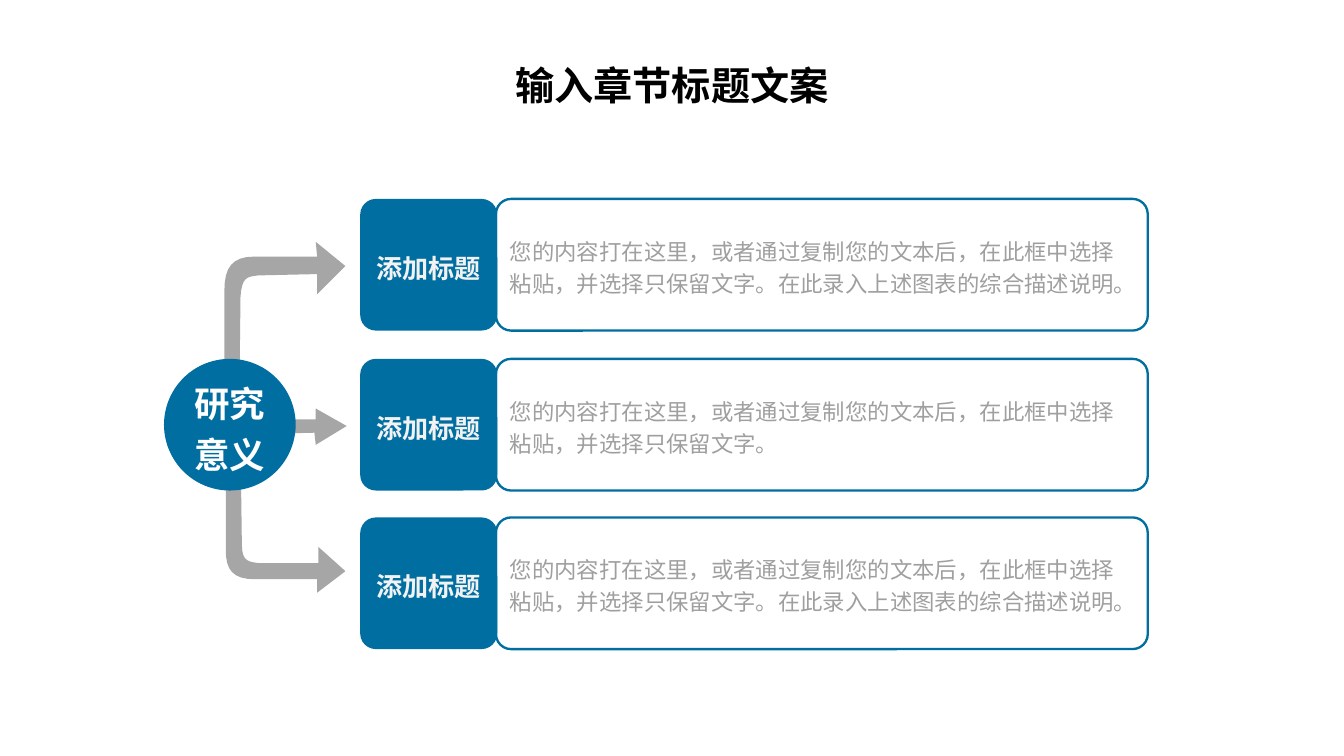
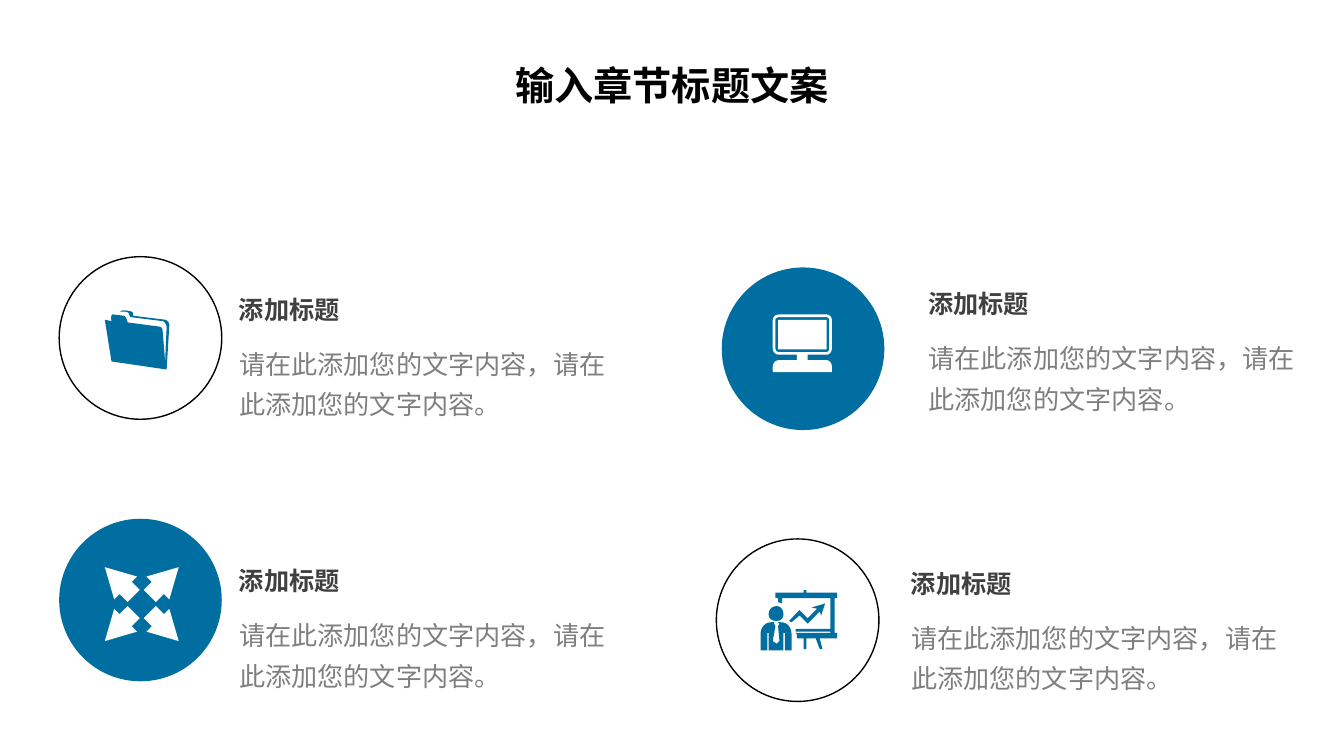
from lxml.etree import SubElement
from pptx import Presentation
from pptx.dml.color import RGBColor
from pptx.enum.shapes import MSO_SHAPE
from pptx.enum.text import MSO_ANCHOR, MSO_AUTO_SIZE, PP_ALIGN
from pptx.oxml.ns import qn
from pptx.util import Inches, Pt

BLUE = RGBColor(0x00, 0x6E, 0xA0)
WHITE = RGBColor(0xFF, 0xFF, 0xFF)
OFF_WHITE = RGBColor(0xF2, 0xF2, 0xF2)
BLACK = RGBColor(0x00, 0x00, 0x00)
ARROW_GRAY = RGBColor(0xA6, 0xA6, 0xA6)
ROW_GRAY = RGBColor(0x9F, 0x9F, 0x9F)
HEADING_GRAY = RGBColor(0x40, 0x40, 0x40)
BODY_GRAY = RGBColor(0x7F, 0x7F, 0x7F)
FONT = "Noto Sans CJK SC"

TITLE = "输入章节标题文案"
HEADING = "添加标题"
SHORT_TEXT = "您的内容打在这里，或者通过复制您的文本后，在此框中选择粘贴，并选择只保留文字。"
LONG_TEXT = SHORT_TEXT + "在此录入上述图表的综合描述说明。"
ITEM_TEXT = "请在此添加您的文字内容，请在此添加您的文字内容。"

UPPER_ARROW = [[
    (11, 127), (12, 41), (13, 26, 17, 26, 25, 25), (69, 24), (69, 39), (90, 18),
    (68, 0), (69, 11), (22, 11), (6, 11, 0, 19, 0, 36), (0, 129),
    (2, 144, 9, 143, 11, 127)]]
MIDDLE_ARROW = [[(0, 20), (83, 18), (84, 27), (107, 13), (84, 0), (84, 8), (0, 8)]]
LOWER_ARROW = [[
    (11, 15), (12, 89), (12, 102, 17, 102, 25, 103), (69, 103), (69, 91), (89, 109),
    (68, 125), (68, 115), (22, 115), (5, 115, 0, 108, 0, 93), (0, 13),
    (1, 0, 8, 1, 11, 15)]]

FOLDER = [[
    (48, 11), (48, 11, 48, 8, 45, 7), (21, 4), (21, 3), (21, 3, 21, 1, 20, 1),
    (18, 0, 13, 0, 13, 0), (11, 1), (15, 1), (15, 1, 18, 1, 18, 3), (19, 5), (43, 8),
    (43, 8, 45, 8, 46, 12), (46, 14, 45, 32, 45, 39), (43, 15), (43, 15, 43, 12, 40, 12),
    (17, 9), (17, 9, 16, 4, 14, 4), (6, 3), (6, 3, 4, 3, 5, 8), (0, 7), (5, 38), (46, 44)]]

MONITOR_CASE = [
    (40, 30), (42, 30, 44, 28, 44, 25), (44, 4), (44, 2, 42, 0, 40, 0), (5, 0),
    (2, 0, 0, 2, 0, 4), (0, 25), (0, 28, 2, 30, 5, 30), (18, 30), (18, 34), (5, 34),
    (2, 34, 0, 36, 0, 39), (0, 42), (0, 43, 1, 43, 1, 43), (43, 43),
    (44, 43, 44, 43, 44, 42), (44, 39), (44, 36, 42, 34, 40, 34), (26, 34), (26, 30)]
MONITOR_BEZEL = [
    (2, 25), (2, 4), (2, 3, 3, 2, 5, 2), (40, 2), (41, 2, 42, 3, 42, 4), (42, 25),
    (42, 27, 41, 28, 40, 28), (5, 28), (3, 28, 2, 27, 2, 25)]
MONITOR_SCREEN = [(4, 4), (40, 4), (40, 26), (4, 26)]
MONITOR = [MONITOR_BEZEL, MONITOR_CASE, MONITOR_SCREEN]

TREND = [
    (29, 15), (21, 23), (23, 24), (29, 19), (35, 25), (44, 16), (45, 19), (48, 10),
    (38, 13), (42, 14), (35, 21)]
BOARD = [
    (57, 6), (57, 2), (34, 2), (34, 0), (32, 0), (32, 2), (11, 2), (11, 6), (13, 6),
    (13, 9), (16, 10), (16, 6), (52, 6), (52, 29), (26, 29), (26, 31), (52, 31), (52, 32),
    (26, 32), (27, 33), (27, 36), (32, 36), (32, 44), (34, 44), (34, 36), (41, 36),
    (44, 44), (46, 44), (44, 36), (57, 36), (57, 32), (55, 32), (55, 6)]
HEAD = [
    (12, 23), (15, 23, 17, 21, 17, 18), (17, 15, 15, 12, 12, 12), (8, 12, 6, 15, 6, 18),
    (6, 21, 8, 23, 12, 23)]
SUIT = [
    (15, 24), (13, 24), (14, 25), (13, 27), (14, 38), (12, 40), (9, 38), (11, 27),
    (10, 25), (10, 24), (8, 24), (3, 24, 0, 28, 0, 33), (0, 45), (5, 45), (5, 32),
    (6, 32), (6, 45), (17, 45), (17, 32), (18, 32), (18, 45), (23, 45), (23, 33),
    (23, 28, 20, 24, 15, 24)]
PRESENTER = [TREND, BOARD, HEAD, SUIT]

CORNER_ARROW = [(0, 0), (24, 7), (20, 11), (26, 17), (17, 26), (11, 20), (7, 24)]
ARROWS_SIZE = 55
FOUR_ARROWS = [
    [(ARROWS_SIZE - x if flip_x else x, ARROWS_SIZE - y if flip_y else y)
     for x, y in CORNER_ARROW]
    for flip_x in (False, True) for flip_y in (False, True)]


def flatten(contour, steps=8):
    points = [contour[0]]
    for part in contour[1:]:
        if len(part) == 2:
            points.append(part)
            continue
        controls = [points[-1], part[:2], part[2:4], part[4:]]
        for step in range(1, steps + 1):
            t = step / steps
            weights = ((1 - t) ** 3, 3 * t * (1 - t) ** 2, 3 * t * t * (1 - t), t ** 3)
            points.append(tuple(
                sum(weight * control[axis] for weight, control in zip(weights, controls))
                for axis in (0, 1)))
    return points


def paint(shape, fill=None, line=None, width=1.25):
    shape.shadow.inherit = False
    if fill is None:
        shape.fill.background()
    else:
        shape.fill.solid()
        shape.fill.fore_color.rgb = fill
    if line is None:
        shape.line.fill.background()
    else:
        shape.line.color.rgb = line
        shape.line.width = Pt(width)


def add_outline(slide, left, top, contours, color):
    builder = None
    for contour in contours:
        points = [(Inches(left + x / 100), Inches(top + y / 100))
                  for x, y in flatten(contour)]
        if builder is None:
            builder = slide.shapes.build_freeform(*points[0], scale=1.0)
        else:
            builder.move_to(*points[0])
        builder.add_line_segments(points[1:], close=True)
    paint(builder.convert_to_shape(), color)


def write(shape, text, size, color, bold=False, align=PP_ALIGN.LEFT, spacing=None):
    text_frame = shape.text_frame
    text_frame.word_wrap = True
    text_frame.text = text
    paragraph = text_frame.paragraphs[0]
    paragraph.alignment = align
    if spacing:
        paragraph.line_spacing = spacing
    font = paragraph.runs[0].font
    font.size = Pt(size)
    font.bold = bold
    font.color.rgb = color
    font.name = FONT
    SubElement(paragraph.runs[0]._r.get_or_add_rPr(), qn("a:ea"), typeface=FONT)


def add_text(slide, left, top, width, height, text, size, color, **style):
    box = slide.shapes.add_textbox(Inches(left), Inches(top), Inches(width), Inches(height))
    write(box, text, size, color, **style)
    box.text_frame.auto_size = MSO_AUTO_SIZE.SHAPE_TO_FIT_TEXT


def add_shape(slide, kind, left, top, width, height, fill=None, line=None, line_width=1.25):
    shape = slide.shapes.add_shape(
        kind, Inches(left), Inches(top), Inches(width), Inches(height))
    paint(shape, fill, line, line_width)
    return shape


def write_inside(shape, text, size, color, **style):
    text_frame = shape.text_frame
    text_frame.margin_left = text_frame.margin_right = Inches(0.07)
    text_frame.margin_top = text_frame.margin_bottom = Inches(0.03)
    text_frame.vertical_anchor = MSO_ANCHOR.MIDDLE
    write(shape, text, size, color, spacing=1.2, **style)


def add_title(slide):
    add_text(slide, 3.42, 0.41, 3.16, 0.45, TITLE, 21, BLACK,
             bold=True, align=PP_ALIGN.CENTER)


def add_row(slide, left, top, height, text):
    body = add_shape(slide, MSO_SHAPE.ROUNDED_RECTANGLE, left + 1.01, top, 4.85, height,
                     line=BLUE)
    body.adjustments[0] = 0.115
    write_inside(body, text, 12, ROW_GRAY)
    label = add_shape(slide, MSO_SHAPE.ROUNDED_RECTANGLE, left, top, 1.02, height, BLUE)
    label.adjustments[0] = 0.119
    write_inside(label, HEADING, 14, OFF_WHITE, bold=True, align=PP_ALIGN.CENTER)


def add_hub(slide, left, top, size):
    add_outline(slide, left + 0.46, top + 0.49, LOWER_ARROW, ARROW_GRAY)
    add_outline(slide, left + 0.29, top + 0.37, MIDDLE_ARROW, ARROW_GRAY)
    add_outline(slide, left + 0.45, top - 0.87, UPPER_ARROW, ARROW_GRAY)
    hub = add_shape(slide, MSO_SHAPE.OVAL, left, top, size, size, BLUE)
    write_inside(hub, "研究意义", 19, WHITE, bold=True, align=PP_ALIGN.CENTER)


def add_icon_circle(slide, left, top, filled, icon, icon_x, icon_y):
    if filled:
        add_shape(slide, MSO_SHAPE.OVAL, left, top, 1.21, 1.21, BLUE)
    else:
        add_shape(slide, MSO_SHAPE.OVAL, left, top, 1.21, 1.21, line=BLACK, line_width=0.75)
    add_outline(slide, left + icon_x, top + icon_y, icon, WHITE if filled else BLUE)


def add_item_text(slide, left, top):
    add_text(slide, left, top, 1, 0.34, HEADING, 13.5, HEADING_GRAY, bold=True)
    add_text(slide, left, top + 0.33, 2.98, 0.68, ITEM_TEXT, 14, BODY_GRAY, spacing=1.3)


def build_significance_slide(slide):
    add_hub(slide, 1.22, 2.67, 0.98)
    rows = ((1.48, LONG_TEXT), (2.67, SHORT_TEXT), (3.85, LONG_TEXT))
    for top, text in rows:
        add_row(slide, 2.68, top, 0.98, text)
    add_title(slide)


def build_icons_slide(slide):
    add_title(slide)
    items = [
        ((0.44, 1.91), False, FOLDER, (0.34, 0.4), (1.68, 2.14)),
        ((5.37, 1.99), True, MONITOR, (0.38, 0.35), (6.81, 2.1)),
        ((0.44, 3.86), True, FOUR_ARROWS, (0.34, 0.36), (1.68, 4.16)),
        ((5.33, 4.01), False, PRESENTER, (0.33, 0.38), (6.68, 4.18)),
    ]
    for circle, filled, icon, icon_offset, text_corner in items:
        add_icon_circle(slide, *circle, filled, icon, *icon_offset)
        add_item_text(slide, *text_corner)


def main():
    presentation = Presentation()
    presentation.slide_width = Inches(10)
    presentation.slide_height = Inches(10 * 9 / 16)
    blank = presentation.slide_layouts[6]
    for build in (build_significance_slide, build_icons_slide):
        build(presentation.slides.add_slide(blank))
    presentation.save("out.pptx")


if __name__ == "__main__":
    main()
